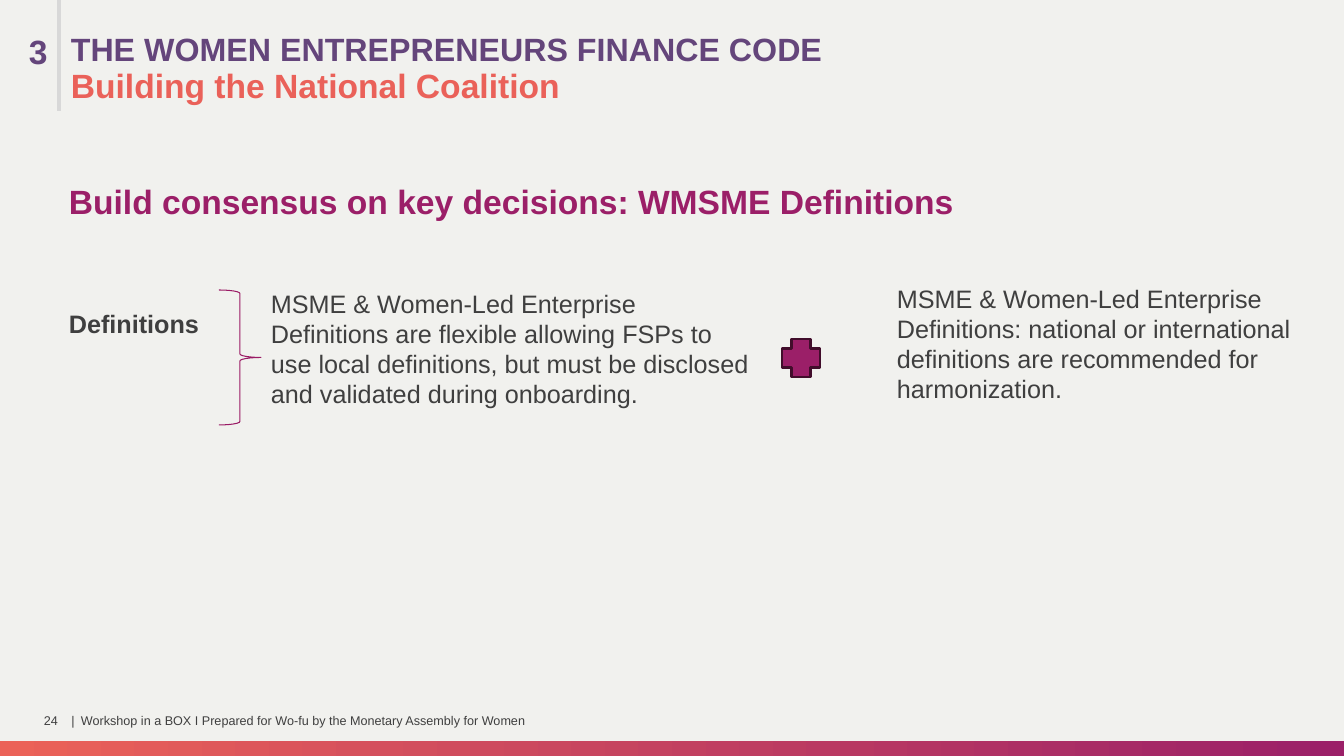
import pptx
import pptx.dml.color
import pptx.enum.shapes
import pptx.enum.text
import pptx.oxml
import pptx.oxml.ns
import pptx.util
from dataclasses import dataclass

EMU_PER_PX = 914400 / 100.8
SHAPES = pptx.enum.shapes.MSO_SHAPE
ALIGN = pptx.enum.text.PP_ALIGN
ANCHOR = pptx.enum.text.MSO_ANCHOR


@dataclass(frozen=True)
class Theme:
    font: str = "Arial"
    background: str = "F1F1EE"
    ink: str = "3F3F3F"
    purple: str = "64457B"
    coral: str = "EA6159"
    magenta: str = "9B1F68"
    brace: str = "9A1A65"
    plus_edge: str = "410D2B"
    rule: str = "D8D8D8"
    bar_left: str = "EB6258"
    bar_right: str = "9B2068"
    heading: int = 24
    title: int = 23
    body: int = 18
    footer: int = 9


theme = Theme()
rgb = pptx.dml.color.RGBColor.from_string


def px(*lengths):
    return [pptx.util.Emu(round(length * EMU_PER_PX)) for length in lengths]


def add_text(place, text, size, color, bold=False, footer=False, align=ALIGN.LEFT):
    box = slide.shapes.add_textbox(*px(*place))
    frame = box.text_frame
    frame.word_wrap = True
    if footer:
        frame.vertical_anchor = ANCHOR.MIDDLE
        frame.margin_left = frame.margin_right = 0
        frame.margin_top = frame.margin_bottom = 0
    para = frame.paragraphs[0]
    para.alignment = align
    span = para.add_run()
    span.text = text
    span.font.name = theme.font
    span.font.size = pptx.util.Pt(size)
    span.font.bold = bold
    span.font.color.rgb = rgb(color)


deck = pptx.Presentation()
deck.slide_width, deck.slide_height = px(1344, 756)
slide = deck.slides.add_slide(deck.slide_layouts[6])
slide.background.fill.solid()
slide.background.fill.fore_color.rgb = rgb(theme.background)

# Gradient bar along the bottom edge
bar = slide.shapes.add_shape(SHAPES.RECTANGLE, *px(0, 741, 1344, 15))
bar.shadow.inherit = False
bar.line.fill.background()
bar.fill.gradient()
bar.fill.gradient_angle = 0
for stop, color in zip(bar.fill.gradient_stops, (theme.bar_left, theme.bar_right)):
    stop.color.rgb = rgb(color)

# Header: section number, title, subtitle and vertical rule
add_text((19, 26, 72, 50), "3", theme.heading, theme.purple, bold=True)
add_text((61, 24, 1210, 50), "THE WOMEN ENTREPRENEURS FINANCE CODE",
         theme.title, theme.purple, bold=True)
add_text((61, 60, 1120, 50), "Building the National Coalition",
         theme.heading, theme.coral, bold=True)
rule = slide.shapes.add_connector(
    pptx.enum.shapes.MSO_CONNECTOR.STRAIGHT, *px(59, 0, 59, 111))
rule.line.color.rgb = rgb(theme.rule)
rule.line.width = pptx.util.Pt(2.25)
rule._element.spPr.append(pptx.oxml.parse_xml(
    "<a:effectLst %s/>" % pptx.oxml.ns.nsdecls("a")))

# Heading and the two definition statements
add_text((59, 176, 1213, 50), "Build consensus on key decisions: WMSME Definitions",
         theme.heading, theme.magenta, bold=True)
add_text((59, 303, 160, 40), "Definitions", theme.body, theme.ink, bold=True)
add_text((261, 283, 498, 132),
         "MSME & Women-Led Enterprise Definitions are flexible allowing FSPs to use "
         "local definitions, but must be disclosed and validated during onboarding.",
         theme.body, theme.ink)
add_text((887, 278, 419, 132),
         "MSME & Women-Led Enterprise Definitions: national or international "
         "definitions are recommended for harmonization.",
         theme.body, theme.ink)

# Brace and plus sign linking the statements
brace = slide.shapes.add_shape(SHAPES.RIGHT_BRACE, *px(219, 290, 42, 135))
brace.shadow.inherit = False
brace.fill.background()
brace.line.color.rgb = rgb(theme.brace)
brace.line.width = pptx.util.Pt(0.75)

plus = slide.shapes.add_shape(SHAPES.CROSS, *px(782, 339, 38, 38))
plus.shadow.inherit = False
plus.fill.solid()
plus.fill.fore_color.rgb = rgb(theme.magenta)
plus.line.color.rgb = rgb(theme.plus_edge)
plus.line.width = pptx.util.Pt(2)

# Footer
add_text((44, 701, 22, 40), "24", theme.footer, theme.ink, footer=True)
add_text((68, 701, 10, 40), "|", theme.footer, theme.ink, footer=True, align=ALIGN.CENTER)
add_text((81, 700, 576, 40),
         "Workshop in a BOX I Prepared for Wo-fu by the Monetary Assembly for Women",
         theme.footer, theme.ink, footer=True)

deck.save("out.pptx")
